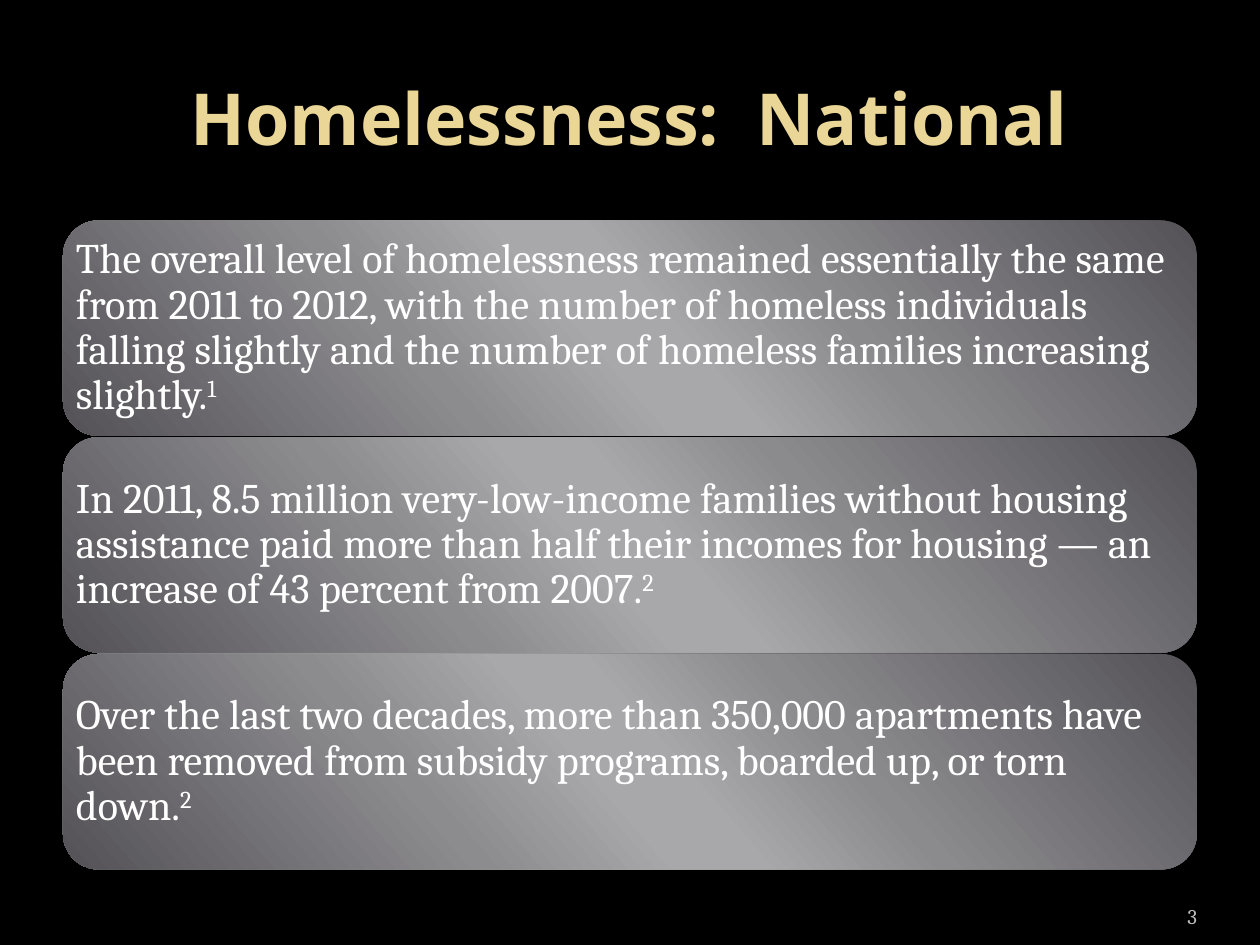
from lxml.etree import SubElement
from pptx import Presentation
from pptx.dml.color import RGBColor
from pptx.enum.shapes import MSO_SHAPE
from pptx.enum.text import MSO_ANCHOR, PP_ALIGN
from pptx.oxml.ns import qn
from pptx.util import Inches, Pt

BLACK = RGBColor(0x00, 0x00, 0x00)
WHITE = RGBColor(0xFF, 0xFF, 0xFF)
PALE_GRAY = RGBColor(0xBD, 0xBD, 0xBD)
GOLD = RGBColor(0xEA, 0xD6, 0x96)
DEEP_GOLD = RGBColor(0xE7, 0xD0, 0x81)
DARK_STEEL = RGBColor(0x54, 0x52, 0x57)
STEEL = RGBColor(0x8B, 0x8A, 0x8D)
SOFT_STEEL = RGBColor(0x8C, 0x8B, 0x8E)
LIGHT_STEEL = RGBColor(0xA8, 0xA7, 0xAA)

TITLE_GRADIENT = [(0, GOLD), (73, GOLD), (100, DEEP_GOLD)]
CARD_GRADIENT = [(0, DARK_STEEL), (33, STEEL), (47, LIGHT_STEEL),
                 (53, LIGHT_STEEL), (68, SOFT_STEEL), (100, DARK_STEEL)]

SLIDE_WIDTH, SLIDE_HEIGHT = Inches(10), Inches(7.5)
MARGIN = Inches(0.5)
CONTENT_WIDTH = SLIDE_WIDTH - 2 * MARGIN

FACTS = [
    ("The overall level of homelessness remained essentially the same from "
     "2011 to 2012, with the number of homeless individuals falling slightly "
     "and the number of homeless families increasing slightly.", "1"),
    ("In 2011, 8.5 million very-low-income families without housing "
     "assistance paid more than half their incomes for housing — an increase "
     "of 43 percent from 2007.", "2"),
    ("Over the last two decades, more than 350,000 apartments have been "
     "removed from subsidy programs, boarded up, or torn down.", "2"),
]


def apply_gradient(fill, properties, stops, angle):
    """Fill with (percent, colour) stops along a clockwise angle in degrees."""
    fill.gradient()
    gradient = properties.find(qn("a:gradFill"))
    gradient.clear()
    stop_list = SubElement(gradient, qn("a:gsLst"))
    for percent, color in stops:
        stop = SubElement(stop_list, qn("a:gs"), pos=str(percent * 1000))
        SubElement(stop, qn("a:srgbClr"), val=str(color))
    SubElement(gradient, qn("a:lin"), ang=str(angle * 60000), scaled="0")


def format_run(run, size, color):
    run.font.name = "Cambria"
    run.font.size = Pt(size)
    run.font.color.rgb = color


def place_title(slide, left, top, width, height):
    title = slide.shapes.title
    title.left, title.top, title.width, title.height = left, top, width, height
    title.text_frame.text = "Homelessness:  National"
    title.text_frame.vertical_anchor = MSO_ANCHOR.MIDDLE
    heading = title.text_frame.paragraphs[0]
    heading.alignment = PP_ALIGN.CENTER
    font = heading.runs[0].font
    font.name, font.size, font.bold = "Open Sans", Pt(41), True
    apply_gradient(font.fill, heading.runs[0]._r.rPr, TITLE_GRADIENT, 80)


def add_fact_card(slide, fact, footnote, left, top, width, height):
    card = slide.shapes.add_shape(
        MSO_SHAPE.ROUNDED_RECTANGLE, left, top, width, height)
    card.shadow.inherit = False
    card.line.fill.background()
    apply_gradient(card.fill, card._element.spPr, CARD_GRADIENT, 139)

    frame = card.text_frame
    frame.word_wrap = True
    frame.vertical_anchor = MSO_ANCHOR.MIDDLE
    # The rounded corners already inset the text by about 0.08 inch.
    frame.margin_left = frame.margin_right = Inches(0.02)
    frame.margin_top = frame.margin_bottom = Inches(0.02)
    frame.text = fact
    statement = frame.paragraphs[0]
    statement.alignment = PP_ALIGN.LEFT
    statement.line_spacing = 0.9
    statement.add_run().text = footnote
    for run in statement.runs:
        format_run(run, 24, WHITE)
    statement.runs[-1].font._element.set("baseline", "30000")


def add_fact_stack(slide, left, top, width, height):
    gap = Inches(0.01)
    card_height = (height - gap * (len(FACTS) - 1)) // len(FACTS)
    for row, (fact, footnote) in enumerate(FACTS):
        add_fact_card(slide, fact, footnote, left,
                      top + row * (card_height + gap), width, card_height)


def add_page_number(slide, left, top, width, height):
    frame = slide.shapes.add_textbox(left, top, width, height).text_frame
    frame.word_wrap = True
    frame.margin_left = frame.margin_right = 0
    frame.vertical_anchor = MSO_ANCHOR.BOTTOM
    frame.text = "3"
    frame.paragraphs[0].alignment = PP_ALIGN.RIGHT
    format_run(frame.paragraphs[0].runs[0], 12, PALE_GRAY)


def main():
    presentation = Presentation()
    presentation.slide_width = SLIDE_WIDTH
    presentation.slide_height = SLIDE_HEIGHT
    title_only = presentation.slide_layouts[5]
    slide = presentation.slides.add_slide(title_only)
    slide.background.fill.solid()
    slide.background.fill.fore_color.rgb = BLACK

    place_title(slide, MARGIN, Inches(0.3), CONTENT_WIDTH, Inches(1.25))
    add_fact_stack(slide, MARGIN, Inches(1.75), CONTENT_WIDTH, Inches(5.15))
    number_width = Inches(0.83)
    add_page_number(slide, SLIDE_WIDTH - MARGIN - number_width, Inches(7.02),
                    number_width, Inches(0.4))
    presentation.save("out.pptx")


if __name__ == "__main__":
    main()
